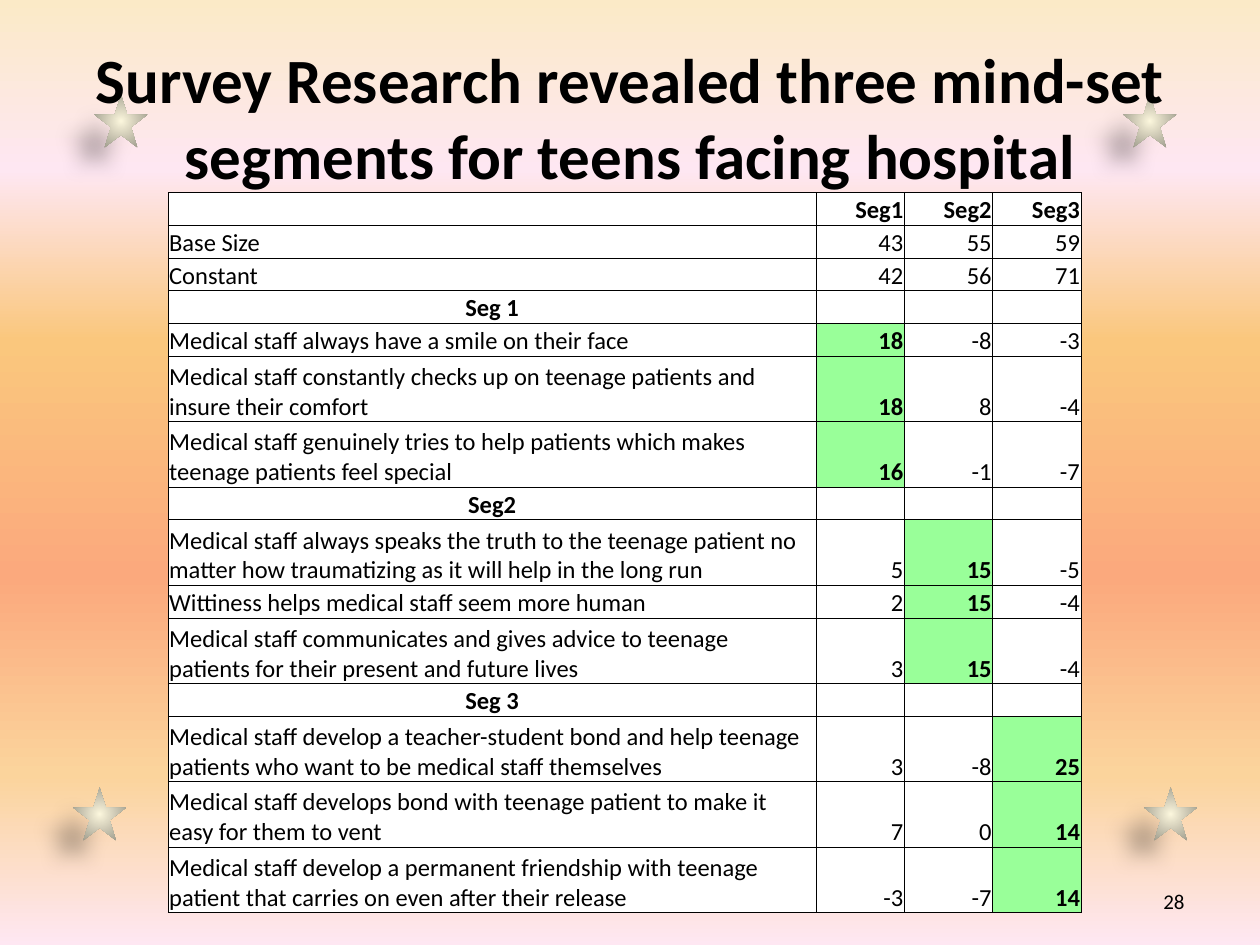
from pptx import Presentation
from pptx.dml.color import RGBColor
from pptx.enum.shapes import MSO_SHAPE
from pptx.enum.text import MSO_ANCHOR, PP_ALIGN
from pptx.oxml import parse_xml
from pptx.oxml.ns import nsdecls
from pptx.util import Cm, Pt

STAR = MSO_SHAPE.STAR_5_POINT
MIDDLE, BOTTOM = MSO_ANCHOR.MIDDLE, MSO_ANCHOR.BOTTOM
LEFT, CENTER, RIGHT = PP_ALIGN.LEFT, PP_ALIGN.CENTER, PP_ALIGN.RIGHT

FONT = "Calibri"
COLORS = {"text": "000000", "cell": "FFFFFF", "winner": "99FF99",
          "star_center": "FCF7DD", "star_edge": "918E81"}
SKY_STOPS = [(0, "FBEAC7"), (18, "FEE7F2"), (36, "FAC77D"),
             (61, "FBA97D"), (82, "FBD49C"), (100, "FEE7F2")]
STAR_STOPS = [(0, COLORS["star_center"]), (100, COLORS["star_edge"])]
LINEAR = '<a:lin ang="5400000" scaled="0"/>'
RADIAL = ('<a:path path="circle"><a:fillToRect l="50000" t="50000" '
          'r="50000" b="50000"/></a:path>')

STAR_SIZE = 1.06
STAR_CORNERS = [(22.65, 1.91), (1.91, 1.91), (1.48, 15.88), (23.07, 15.88)]
TITLE_BOX = (1.27, 0.76, 22.86, 3.18)
NUMBER_BOX = (18.2, 17.65, 5.93, 1.02)
TABLE_BOX = (3.39, 3.88, 18.4, 14.53)
VALUE_WIDTH = 1.78

SUMMARY = [("Base Size", (43, 55, 59)), ("Constant", (42, 56, 71))]
SEGMENTS = [
    ("Seg 1", [
        ("Medical staff always have a smile on their face", (18, -8, -3)),
        ("Medical staff constantly checks up on teenage patients and insure their comfort",
         (18, 8, -4)),
        ("Medical staff genuinely tries to help patients which makes teenage patients feel special",
         (16, -1, -7))]),
    ("Seg2", [
        ("Medical staff always speaks the truth to the teenage patient no matter how "
         "traumatizing as it will help in the long run", (5, 15, -5)),
        ("Wittiness helps medical staff seem more human", (2, 15, -4)),
        ("Medical staff communicates and gives advice to teenage patients for their "
         "present and future lives", (3, 15, -4))]),
    ("Seg 3", [
        ("Medical staff develop a teacher-student bond and help teenage patients who "
         "want to be medical staff themselves", (3, -8, 25)),
        ("Medical staff develops bond with teenage patient to make it easy for them to vent",
         (7, 0, 14)),
        ("Medical staff develop a permanent friendship with teenage patient that carries "
         "on even after their release", (-3, -7, 14))]),
]
ONE_LINE_LENGTH = 60


def set_format(target, values):
    for name, value in values.items():
        setattr(target, name, value)


def place(shape, box):
    names = ("left", "top", "width", "height")
    set_format(shape, dict(zip(names, map(Cm, box))))


def write_text(frame, text, size, bold=False, align=LEFT):
    paragraph = frame.paragraphs[0]
    paragraph.alignment = align
    run = paragraph.add_run()
    run.text = text
    set_format(run.font, {"name": FONT, "size": Pt(size), "bold": bold})
    run.font.color.rgb = RGBColor.from_string(COLORS["text"])


def gradient(stops, direction):
    stop_xml = "".join(f'<a:gs pos="{position * 1000}"><a:srgbClr val="{color}"/></a:gs>'
                       for position, color in stops)
    return parse_xml(f'<a:gradFill {nsdecls("a")} rotWithShape="1">'
                     f'<a:gsLst>{stop_xml}</a:gsLst>{direction}</a:gradFill>')


def paint_background(slide):
    slide.background.fill.solid()
    properties = slide.element.xpath("p:cSld/p:bg/p:bgPr")[0]
    properties.replace(properties[0], gradient(SKY_STOPS, LINEAR))


def add_star(slide, box):
    star = slide.shapes.add_shape(STAR, *map(Cm, box))
    star.line.fill.background()
    star.fill.solid()
    properties = star.element.spPr
    properties.replace(properties.find(".//{*}solidFill"), gradient(STAR_STOPS, RADIAL))
    properties.append(parse_xml(
        f'<a:effectLst {nsdecls("a")}><a:outerShdw blurRad="{Pt(11.8)}" dist="{Pt(19.7)}" '
        f'dir="{141 * 60000}" algn="ctr" rotWithShape="0"><a:srgbClr val="000000">'
        '<a:alpha val="28000"/></a:srgbClr></a:outerShdw></a:effectLst>'))
    slide.shapes.title.element.addprevious(star.element)


def add_title(slide, box):
    title = slide.shapes.title
    place(title, box)
    set_format(title.text_frame, {"vertical_anchor": MIDDLE, "word_wrap": True})
    write_text(title.text_frame,
               "Survey Research revealed three mind-set segments for teens facing hospital",
               36, True, CENTER)


def add_slide_number(slide, box):
    frame = slide.shapes.add_textbox(*map(Cm, box)).text_frame
    set_format(frame, {"vertical_anchor": MIDDLE, "word_wrap": True})
    write_text(frame, "28", 12, align=RIGHT)


def format_cell(cell, text, bold, align, color):
    set_format(cell, {"vertical_anchor": BOTTOM, "margin_left": Cm(0.02),
                      "margin_right": Cm(0.02), "margin_top": Cm(0.02), "margin_bottom": 0})
    if text:
        write_text(cell.text_frame, text, 14, bold, align)
    else:
        cell.text_frame.paragraphs[0]._p.append(
            parse_xml(f'<a:endParaRPr {nsdecls("a")} sz="1400"/>'))
    properties = cell._tc.get_or_add_tcPr()
    for side in ("lnL", "lnR", "lnT", "lnB"):
        properties.append(parse_xml(
            f'<a:{side} {nsdecls("a")} w="{Pt(0.5)}"><a:solidFill>'
            f'<a:srgbClr val="{COLORS["text"]}"/></a:solidFill></a:{side}>'))
    cell.fill.solid()
    cell.fill.fore_color.rgb = RGBColor.from_string(color)


def table_rows():
    rows = [("", ("Seg1", "Seg2", "Seg3"), True, None)]
    rows += [(label, values, False, None) for label, values in SUMMARY]
    for winner, (heading, statements) in enumerate(SEGMENTS):
        rows.append((heading, ("", "", ""), True, None))
        rows += [(label, values, False, winner) for label, values in statements]
    return rows


def add_segment_table(slide, box):
    rows = table_rows()
    table = slide.shapes.add_table(len(rows), 4, *map(Cm, box)).table
    set_format(table, {"first_row": False, "horz_banding": False})
    widths = [box[2] - 3 * VALUE_WIDTH] + [VALUE_WIDTH] * 3
    for column, width in zip(table.columns, widths):
        column.width = Cm(width)
    line_counts = [2 if len(row[0]) > ONE_LINE_LENGTH else 1 for row in rows]
    line_height = box[3] / sum(line_counts)
    for index, (label, values, bold, winner) in enumerate(rows):
        table.rows[index].height = Cm(line_height * line_counts[index])
        format_cell(table.cell(index, 0), label, bold,
                    CENTER if bold else LEFT, COLORS["cell"])
        for segment, value in enumerate(values):
            wins = segment == winner
            format_cell(table.cell(index, segment + 1), str(value), bold or wins, RIGHT,
                        COLORS["winner" if wins else "cell"])


def main():
    presentation = Presentation()
    set_format(presentation, {"slide_width": Cm(25.4), "slide_height": Cm(19.05)})
    slide = presentation.slides.add_slide(presentation.slide_layouts[5])
    paint_background(slide)
    for left, top in STAR_CORNERS:
        add_star(slide, (left, top, STAR_SIZE, STAR_SIZE))
    add_title(slide, TITLE_BOX)
    add_slide_number(slide, NUMBER_BOX)
    add_segment_table(slide, TABLE_BOX)
    presentation.save("out.pptx")


if __name__ == "__main__":
    main()
